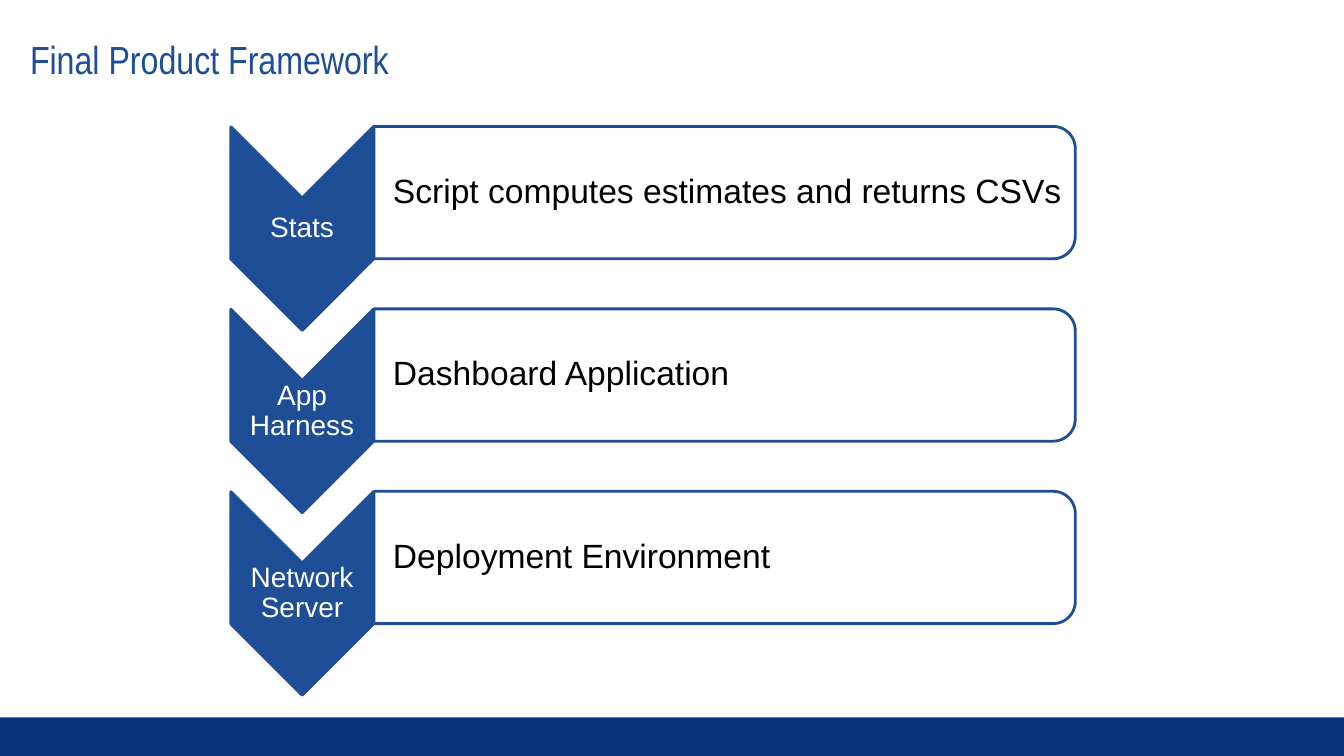
from pptx import Presentation
from pptx.dml.color import RGBColor
from pptx.enum.shapes import MSO_SHAPE as Shape
from pptx.enum.text import MSO_ANCHOR as Anchor, PP_ALIGN as Align
from pptx.oxml.ns import qn
from pptx.util import Pt
from lxml import etree

COLORS = {"footer": "0A357E", "blue": "1E4E96", "white": "FFFFFF", "black": "000000"}

presentation = Presentation()
presentation.slide_width = Pt(960)
presentation.slide_height = Pt(540)
slide = presentation.slides.add_slide(presentation.slide_layouts[6])


def add_block(kind, left, top, width, height, fill, line=None):
    shape = slide.shapes.add_shape(kind, Pt(left), Pt(top), Pt(width), Pt(height))
    shape.shadow.inherit = False
    shape.fill.solid()
    shape.fill.fore_color.rgb = RGBColor.from_string(COLORS[fill])
    if line:
        shape.line.color.rgb = RGBColor.from_string(COLORS[line])
        shape.line.width = Pt(2)
    else:
        shape.line.fill.background()
    return shape


def add_text(text, box, insets, size, color, font="Arial", align=Align.LEFT):
    text_frame = slide.shapes.add_textbox(*map(Pt, box)).text_frame
    text_frame.word_wrap = True
    text_frame.vertical_anchor = Anchor.MIDDLE
    text_frame.margin_left, text_frame.margin_top = Pt(insets[0]), Pt(insets[1])
    text_frame.margin_right, text_frame.margin_bottom = Pt(insets[2]), Pt(insets[3])
    text_frame.text = text
    paragraph = text_frame.paragraphs[0]
    paragraph.alignment = align
    paragraph.line_spacing = 0.9
    run_font = paragraph.runs[0].font
    run_font.name = font
    run_font.size = Pt(size)
    run_font.color.rgb = RGBColor.from_string(COLORS[color])


add_block(Shape.RECTANGLE, 0, 512.5, 960, 27.5, "footer")
add_text("Final Product Framework", (14.4, 14.4, 928, 59.8), (7.2, 7.2, 14.4, 7.2),
         28, "blue", font="Arial Narrow")

layers = [
    ("Stats", "Script computes estimates and returns CSVs"),
    ("App Harness", "Dashboard Application"),
    ("Network Server", "Deployment Environment"),
]
LAYER_STEP = 130.3

for index, (label, description) in enumerate(layers):
    offset = index * LAYER_STEP

    chevron = add_block(Shape.CHEVRON, 143.1, 112.4 + offset, 145.4, 101.8, "blue", "blue")
    chevron.rotation = 90
    add_text(label, (164.9, 141.7 + offset, 101.8, 43.6), (0.9, 0.9, 0.9, 0.9),
             20, "white", align=Align.CENTER)

    panel = add_block(Shape.ROUND_2_SAME_RECTANGLE, 470.3, -112.9 + offset, 94.5, 501,
                      "white", "blue")
    panel.rotation = 90
    fill_color = panel.fill._xPr.find(qn("a:solidFill"))[0]
    etree.SubElement(fill_color, qn("a:alpha")).set("val", "90000")
    add_text(description, (267, 94.9 + offset, 496.5, 85.2), (13.7, 1.2, 1.2, 1.2),
             24, "black")

presentation.save("out.pptx")
